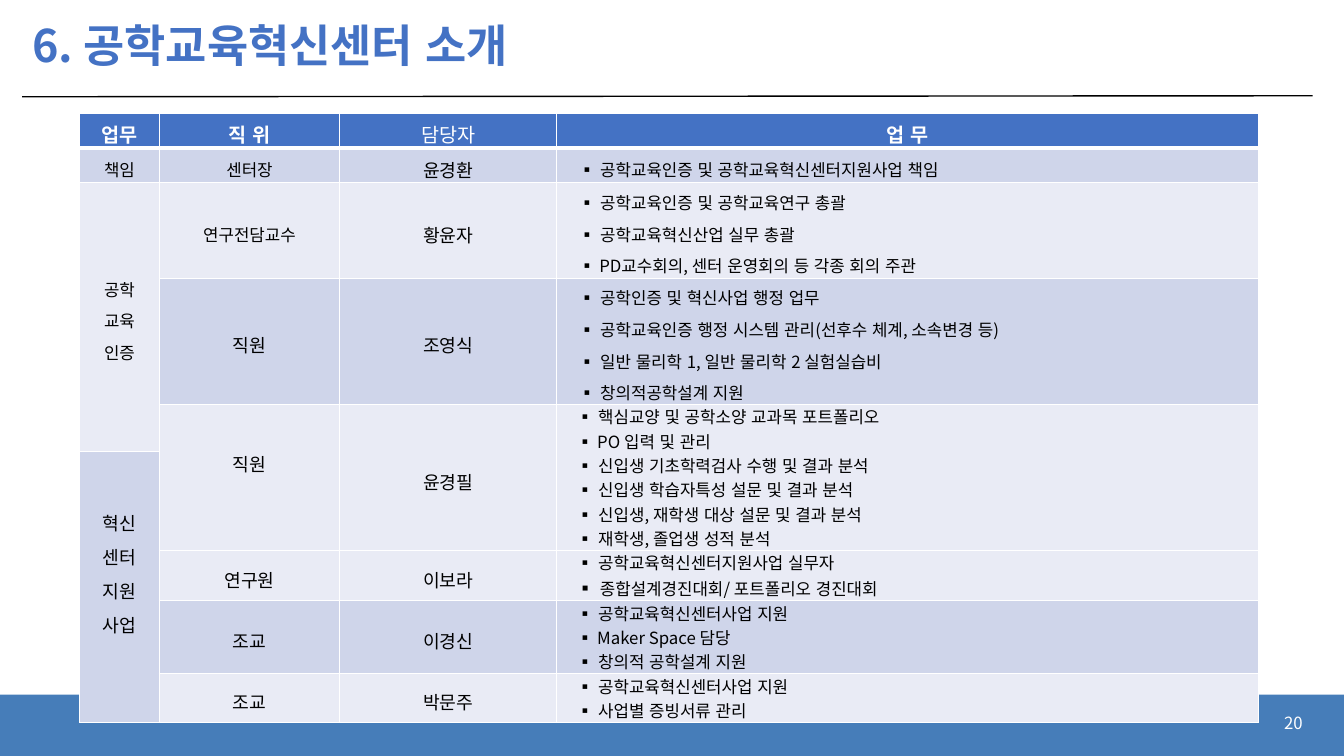
from dataclasses import dataclass
from typing import Any, NamedTuple

import pptx
import pptx.dml.color
import pptx.enum.lang
import pptx.enum.shapes
import pptx.enum.text
import pptx.oxml
import pptx.oxml.ns
import pptx.util

ALIGN = pptx.enum.text.PP_ALIGN
MIDDLE = pptx.enum.text.MSO_ANCHOR.MIDDLE
KOREAN = pptx.enum.lang.MSO_LANGUAGE_ID.KOREAN
EMU_PER_PX = 9144  # 100 px to the inch


@dataclass(frozen=True)
class Theme:
    font: str = "Noto Sans CJK KR"
    blue: str = "4472C4"
    band: str = "467DB9"
    dark_row: str = "CFD5EA"
    light_row: str = "E9EBF5"
    white: str = "FFFFFF"
    black: str = "000000"
    title_pt: int = 32
    header_pt: int = 14
    name_pt: int = 13
    body_pt: int = 12


THEME = Theme()


class Box(NamedTuple):
    left: int
    top: int
    width: int
    height: int


@dataclass(frozen=True)
class TextStyle:
    size: int
    color: str = THEME.black
    bold: bool = False
    align: Any = ALIGN.CENTER
    spacing: float = 1.3
    indent: int = 0


@dataclass(frozen=True)
class Entry:
    row: int
    col: int
    lines: list[str]
    style: TextStyle
    rows: int = 1
    marker: str = ""
    last_marker_pt: int = THEME.body_pt
    below: int = 0


HEADER = TextStyle(THEME.header_pt, THEME.white, True, spacing=1.2)
HEADER_PLAIN = TextStyle(THEME.header_pt, THEME.white, spacing=1.2)
BODY = TextStyle(THEME.body_pt)
NAME = TextStyle(THEME.name_pt)
WIDE = TextStyle(THEME.body_pt, align=ALIGN.LEFT, indent=22)
TIGHT = TextStyle(THEME.body_pt, align=ALIGN.LEFT, spacing=1.0, indent=20)
MARK = "▪ "

COLS = [79, 179, 215, 696]
ROWS = [34, 34, 95, 125, 47, 98, 50, 72, 49]
TABLE = Box(79, 113, sum(COLS), sum(ROWS))
ENTRIES = [
    # Header
    Entry(0, 0, ["업무"], HEADER),
    Entry(0, 1, ["직 위"], HEADER),
    Entry(0, 2, ["담당자"], HEADER_PLAIN),
    Entry(0, 3, ["업 무"], HEADER),
    # Areas of work
    Entry(1, 0, ["책임"], BODY),
    Entry(2, 0, ["공학", "교육", "인증"], BODY, rows=3),
    Entry(5, 0, ["혁신", "센터", "지원", "사업"], NAME, rows=4, below=34),
    # Positions
    Entry(1, 1, ["센터장"], BODY),
    Entry(2, 1, ["연구전담교수"], BODY),
    Entry(3, 1, ["직원"], NAME),
    Entry(4, 1, ["직원"], NAME, rows=2, below=34),
    Entry(6, 1, ["연구원"], NAME),
    Entry(7, 1, ["조교"], NAME),
    Entry(8, 1, ["조교"], NAME),
    # People
    Entry(1, 2, ["윤경환"], NAME),
    Entry(2, 2, ["황윤자"], NAME),
    Entry(3, 2, ["조영식"], NAME),
    Entry(4, 2, ["윤경필"], NAME, rows=2),
    Entry(6, 2, ["이보라"], NAME),
    Entry(7, 2, ["이경신"], NAME),
    Entry(8, 2, ["박문주"], NAME),
    # Duties
    Entry(1, 3, ["공학교육인증 및 공학교육혁신센터지원사업 책임"], WIDE, marker=MARK),
    Entry(2, 3, ["공학교육인증 및 공학교육연구 총괄", "공학교육혁신산업 실무 총괄",
                 "PD교수회의, 센터 운영회의 등 각종 회의 주관"], WIDE, marker=MARK),
    Entry(3, 3, ["공학인증 및 혁신사업 행정 업무",
                 "공학교육인증 행정 시스템 관리(선후수 체계, 소속변경 등)",
                 "일반 물리학 1, 일반 물리학 2 실험실습비",
                 "창의적공학설계 지원"], WIDE, marker=MARK),
    Entry(4, 3, ["핵심교양 및 공학소양 교과목 포트폴리오", "PO 입력 및 관리",
                 "신입생 기초학력검사 수행 및 결과 분석",
                 "신입생 학습자특성 설문 및 결과 분석",
                 "신입생, 재학생 대상 설문 및 결과 분석",
                 "재학생, 졸업생 성적 분석"], TIGHT, rows=2, marker=MARK),
    Entry(6, 3, ["공학교육혁신센터지원사업 실무자", "종합설계경진대회/ 포트폴리오 경진대회"],
          TIGHT, marker=MARK, last_marker_pt=THEME.name_pt),
    Entry(7, 3, ["공학교육혁신센터사업 지원", "Maker Space 담당", "창의적 공학설계 지원"],
          TIGHT, marker=MARK),
    Entry(8, 3, ["공학교육혁신센터사업 지원", "사업별 증빙서류 관리"], TIGHT, marker=MARK),
]


def px(n: int) -> pptx.util.Emu:
    return pptx.util.Emu(n * EMU_PER_PX)


def rgb(color: str) -> pptx.dml.color.RGBColor:
    return pptx.dml.color.RGBColor.from_string(color)


def add_run(p: Any, text: str, style: TextStyle, size: int) -> None:
    r = p.add_run()
    r.text = text
    values = {"size": pptx.util.Pt(size), "bold": style.bold, "name": THEME.font,
              "language_id": KOREAN}
    for key, value in values.items():
        setattr(r.font, key, value)
    r.font.color.rgb = rgb(style.color)
    latin = r.font._element.find(pptx.oxml.ns.qn("a:latin"))
    latin.addnext(latin.makeelement(pptx.oxml.ns.qn("a:ea"), {"typeface": THEME.font}))


def format_paragraph(p: Any, style: TextStyle) -> None:
    for key, value in {"alignment": style.align, "line_spacing": style.spacing}.items():
        setattr(p, key, value)
    if style.indent:
        pPr = p._p.get_or_add_pPr()
        pPr.set("marL", str(px(style.indent)))
        pPr.set("indent", "0")


def add_text(s: Any, box: Box, text: str, style: TextStyle) -> None:
    tf = s.shapes.add_textbox(*map(px, box)).text_frame
    for key, value in {"word_wrap": True, "vertical_anchor": MIDDLE}.items():
        setattr(tf, key, value)
    p = tf.paragraphs[0]
    format_paragraph(p, style)
    add_run(p, text, style, style.size)


def format_cell(cell: Any, row: int) -> None:
    margins = ("margin_left", "margin_top", "margin_right", "margin_bottom")
    for key, value in {**dict.fromkeys(margins, 0), "vertical_anchor": MIDDLE}.items():
        setattr(cell, key, value)
    tcPr = cell._tc.get_or_add_tcPr()
    thick = {0: "lnB", 1: "lnT"}.get(row)
    for side in ("lnL", "lnR", "lnT", "lnB"):
        width = pptx.util.Pt(3 if side == thick else 1)
        tcPr.append(pptx.oxml.parse_xml(
            f'<a:{side} {pptx.oxml.ns.nsdecls("a")} w="{width}"><a:solidFill>'
            f'<a:srgbClr val="{THEME.white}"/></a:solidFill></a:{side}>'))
    body = THEME.dark_row if row % 2 else THEME.light_row
    cell.fill.solid()
    cell.fill.fore_color.rgb = rgb(body if row else THEME.blue)


def fill_entry(table: Any, entry: Entry) -> None:
    cell = table.cell(entry.row, entry.col)
    if entry.rows > 1:
        cell.merge(table.cell(entry.row + entry.rows - 1, entry.col))
    cell.margin_bottom = px(entry.below)
    tf = cell.text_frame
    for i, line in enumerate(entry.lines):
        p = tf.add_paragraph() if i else tf.paragraphs[0]
        format_paragraph(p, entry.style)
        last = i == len(entry.lines) - 1
        if last and entry.last_marker_pt != entry.style.size and entry.marker:
            add_run(p, entry.marker, entry.style, entry.last_marker_pt)
            add_run(p, line, entry.style, entry.style.size)
        else:
            add_run(p, entry.marker + line, entry.style, entry.style.size)


def add_duty_table(s: Any) -> None:
    table = s.shapes.add_table(len(ROWS), len(COLS), *map(px, TABLE)).table
    for column, width in zip(table.columns, COLS):
        column.width = px(width)
    for i, height in enumerate(ROWS):
        table.rows[i].height = px(height)
        for cell in table.rows[i].cells:
            format_cell(cell, i)
    for entry in ENTRIES:
        fill_entry(table, entry)


def main() -> None:
    prs = pptx.Presentation()
    prs.slide_width, prs.slide_height = px(1333), px(750)
    s = prs.slides.add_slide(prs.slide_layouts[6])

    # Footer band
    band = s.shapes.add_shape(pptx.enum.shapes.MSO_SHAPE.RECTANGLE,
                              *map(px, Box(0, 689, 1333, 61)))
    band.shadow.inherit = False
    band.fill.solid()
    band.fill.fore_color.rgb = rgb(THEME.band)
    band.line.fill.background()

    # Title rule
    rule = s.shapes.add_connector(pptx.enum.shapes.MSO_CONNECTOR.STRAIGHT,
                                  *map(px, (22, 96, 1302, 95)))
    rule.line.color.rgb = rgb(THEME.black)
    rule.line.width = pptx.util.Pt(1)
    rule._element.spPr.append(pptx.oxml.parse_xml(
        f'<a:effectLst {pptx.oxml.ns.nsdecls("a")}/>'))

    # Title and page number
    add_text(s, Box(22, 10, 1281, 75), "6. 공학교육혁신센터 소개",
             TextStyle(THEME.title_pt, THEME.blue, True, ALIGN.LEFT, 0.9))
    add_text(s, Box(1002, 697, 300, 40), "20",
             TextStyle(THEME.body_pt, THEME.white, align=ALIGN.RIGHT, spacing=1.0))

    # Duties by position
    add_duty_table(s)
    prs.save("out.pptx")


if __name__ == "__main__":
    main()
